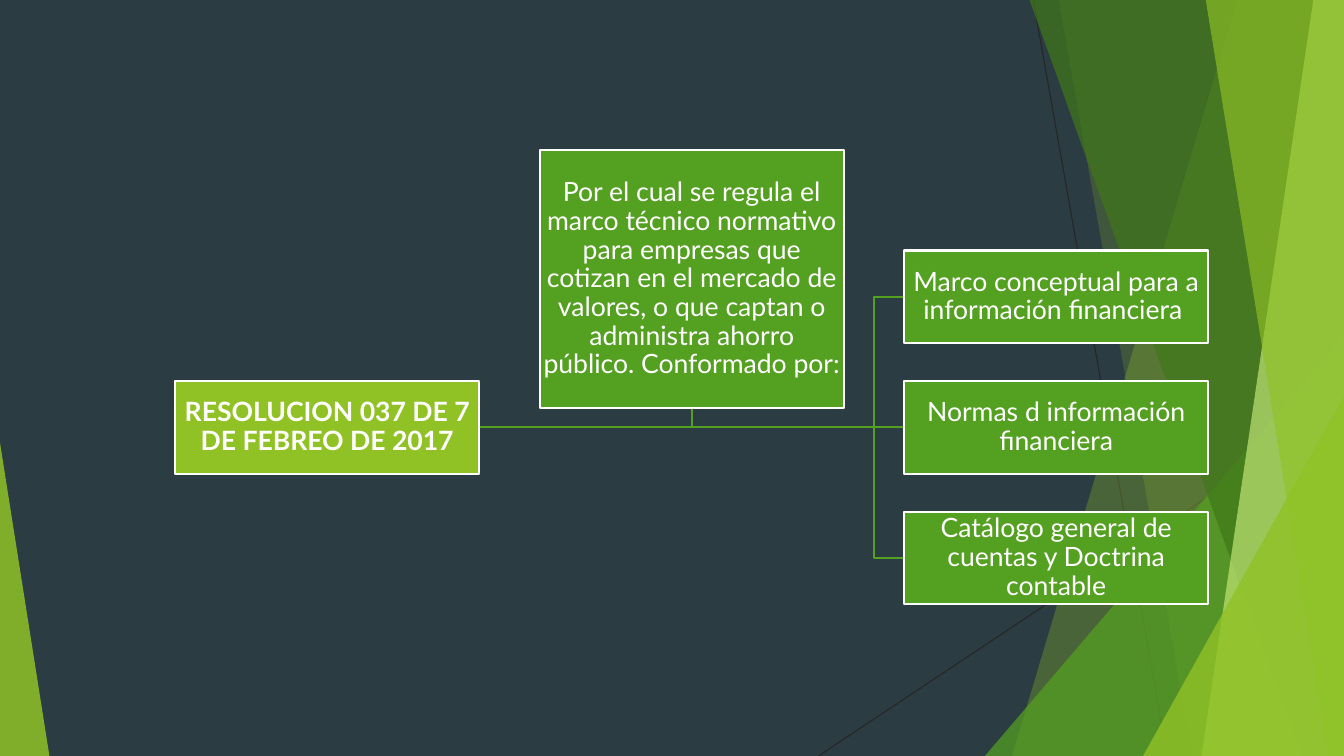
from lxml.etree import SubElement
from pptx import Presentation
from pptx.dml.color import RGBColor
from pptx.enum.shapes import MSO_CONNECTOR as Connector, MSO_SHAPE as Shape
from pptx.enum.text import MSO_ANCHOR as Anchor, PP_ALIGN as Align
from pptx.oxml.ns import qn
from pptx.util import Inches, Pt

NIGHT = RGBColor(0x2C, 0x3C, 0x43)
LIME = RGBColor(0x90, 0xC2, 0x26)
GREEN = RGBColor(0x54, 0xA0, 0x21)
FOREST = RGBColor(0x3F, 0x78, 0x19)
PALE = RGBColor(0xC0, 0xE4, 0x74)
INK = RGBColor(0x26, 0x26, 0x26)
WHITE = RGBColor(0xFF, 0xFF, 0xFF)

COLUMNS = [13.05 + 27.12 * column for column in range(3)]
ROWS = [33.13 + 17.27 * row for row in range(3)]
BOX_WIDTH, BOX_HEIGHT = 22.6, 12.27
TOP = -0.13


class Board:
    """Draws on one slide, with lengths given as percent of its size."""

    font, size = "Lato", Pt(19)

    def __init__(self, deck, background):
        """Add a blank slide with a plain background."""
        self.width, self.height = deck.slide_width, deck.slide_height
        self.slide = deck.slides.add_slide(deck.slide_layouts[6])
        self.shapes = self.slide.shapes
        self.slide.background.fill.solid()
        self.slide.background.fill.fore_color.rgb = background

    def scale(self, x, y):
        """Turn percentages into slide units."""
        return round(x * self.width / 100), round(y * self.height / 100)

    def tint(self, shape, color, opacity):
        """Give a shape a translucent fill and no outline."""
        shape.shadow.inherit = False
        shape.fill.solid()
        shape.fill.fore_color.rgb = color
        srgb = shape._element.spPr.find(qn("a:solidFill"))[0]
        SubElement(srgb, qn("a:alpha")).set("val", str(opacity * 1000))
        shape.line.fill.background()

    def outline(self, points, close):
        """Build a freeform through the points."""
        start, *rest = [self.scale(*point) for point in points]
        builder = self.shapes.build_freeform(*start)
        builder.add_line_segments(rest, close=close)
        return builder.convert_to_shape()

    def wedge(self, top_x, bottom_x, color, opacity):
        """Fill from a slanted edge to the right side of the slide."""
        corners = [(top_x, TOP), (100, TOP), (100, 100), (bottom_x, 100)]
        self.tint(self.outline(corners, True), color, opacity)

    def corner(self, left, top, width, apex, color, opacity):
        """Draw a right triangle standing on the bottom edge."""
        triangle = self.shapes.add_shape(
            Shape.ISOSCELES_TRIANGLE, *self.scale(left, top),
            *self.scale(width, 100 - top))
        triangle.adjustments[0] = apex
        self.tint(triangle, color, opacity)

    def line(self, start, end, color, weight):
        """Draw a straight connector without a shadow."""
        connector = self.shapes.add_connector(
            Connector.STRAIGHT, *self.scale(*start), *self.scale(*end))
        connector.line.color.rgb = color
        connector.line.width = Pt(weight)
        SubElement(connector._element.spPr, qn("a:effectLst"))
        return connector

    def branch(self, points):
        """Draw a bent, open branch of the diagram."""
        bend = self.outline(points, False)
        bend.shadow.inherit = False
        bend.fill.background()
        bend.line.color.rgb = GREEN
        bend.line.width = Pt(1.5)

    def box(self, left, top, text, height=BOX_HEIGHT, color=GREEN, bold=False):
        """Draw a white-edged box with centred text."""
        box = self.shapes.add_shape(
            Shape.RECTANGLE, *self.scale(left, top),
            *self.scale(BOX_WIDTH, height))
        box.shadow.inherit = False
        box.fill.solid()
        box.fill.fore_color.rgb = color
        box.line.color.rgb = WHITE
        box.line.width = Pt(1.5)
        frame = box.text_frame
        frame.word_wrap = True
        frame.vertical_anchor = Anchor.MIDDLE
        frame.margin_left = frame.margin_right = Inches(0.01)
        frame.margin_top = frame.margin_bottom = Inches(0.01)
        frame.text = text
        paragraph = frame.paragraphs[0]
        paragraph.alignment = Align.CENTER
        paragraph.line_spacing = 0.9
        font = paragraph.runs[0].font
        font.name, font.size, font.bold = self.font, self.size, bold
        font.color.rgb = WHITE
        return box


def draw_backdrop(board):
    """Draw the slanted green decoration."""
    board.line((76.88, 0), (86.85, 100), INK, 0.75)
    board.line((100, 53.73), (60.9, 100), INK, 0.75)
    board.wedge(92.1, 75.3, LIME, 30)
    board.wedge(78.75, 88.73, LIME, 20)
    board.corner(73.28, 44.4, 26.72, 1, GREEN, 72)
    board.wedge(76.58, 96.83, FOREST, 70)
    board.wedge(97.73, 89.4, PALE, 70)
    board.wedge(89.7, 98.85, LIME, 65)
    board.corner(85.05, 52.4, 14.95, 1, LIME, 80)
    board.corner(0, 58.53, 3.68, 0, LIME, 85)


def draw_diagram(board):
    """Draw the resolution, its purpose and its three parts."""
    root_x, purpose_x, parts_x = COLUMNS
    upper, middle, lower = [row + BOX_HEIGHT / 2 for row in ROWS]
    purpose_top, purpose_height = 19.87, 34.13
    purpose_middle = purpose_x + BOX_WIDTH / 2
    start = (root_x + BOX_WIDTH, middle)
    bend_x = parts_x - 2.26

    board.branch([start, (purpose_middle, middle),
                  (purpose_middle, purpose_top + purpose_height)])
    for y in (lower, upper):
        board.branch([start, (bend_x, middle), (bend_x, y), (parts_x, y)])
    trunk = board.line(start, (parts_x, middle), GREEN, 1.5)

    resolution = board.box(root_x, ROWS[1],
                           "RESOLUCION 037 DE 7 DE FEBREO DE 2017",
                           color=LIME, bold=True)
    parts = [board.box(parts_x, row, text) for row, text in zip(ROWS, (
        "Marco conceptual para a información financiera ",
        "Normas d información financiera",
        "Catálogo general de cuentas y Doctrina contable"))]
    board.box(purpose_x, purpose_top,
              "Por el cual se regula el marco técnico normativo para empresas "
              "que cotizan en el mercado de valores, o que captan o administra "
              "ahorro público. Conformado por:", height=purpose_height)
    trunk.begin_connect(resolution, 3)
    trunk.end_connect(parts[1], 1)


def main():
    """Build and save the slide."""
    deck = Presentation()
    deck.slide_width, deck.slide_height = Inches(13.33), Inches(7.5)
    board = Board(deck, NIGHT)
    draw_backdrop(board)
    draw_diagram(board)
    deck.save("out.pptx")


if __name__ == "__main__":
    main()
